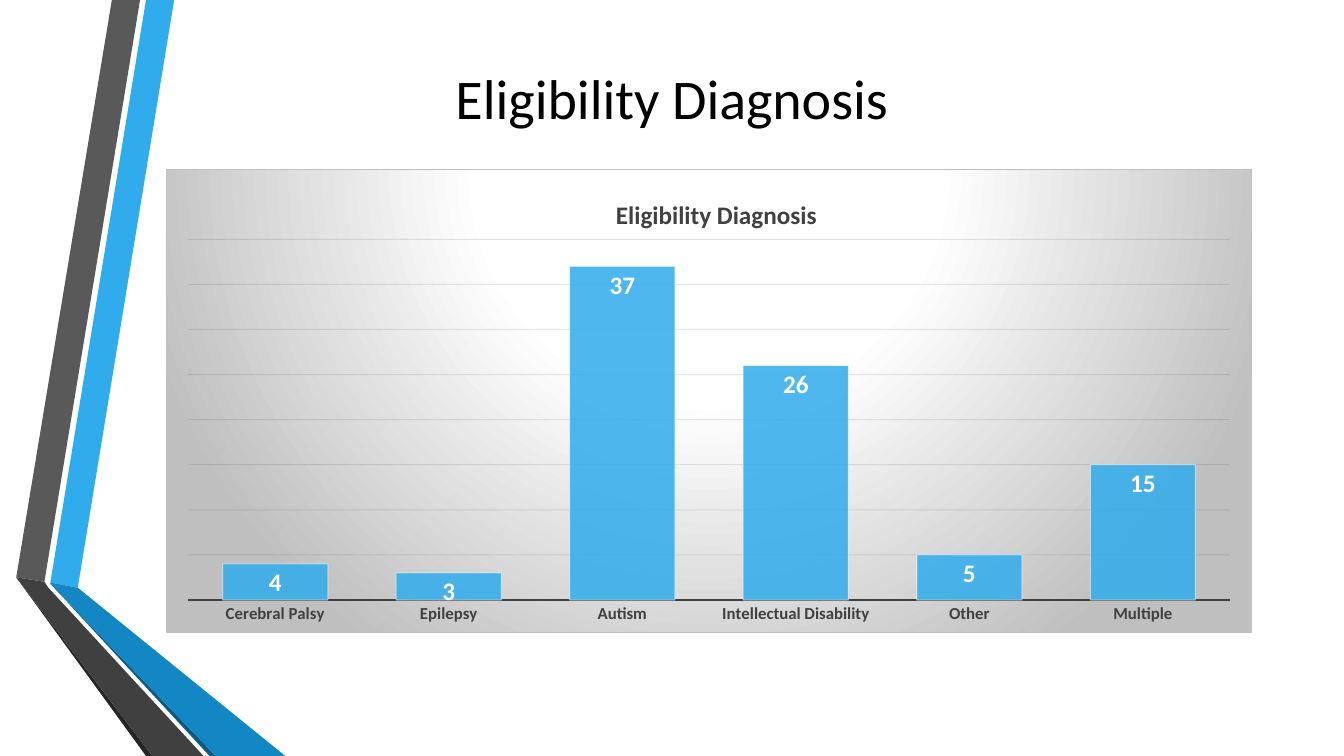
from lxml import etree
from pptx import Presentation
from pptx.chart.data import CategoryChartData
from pptx.dml.color import RGBColor
from pptx.enum.chart import XL_CHART_TYPE as ChartType
from pptx.enum.chart import XL_LABEL_POSITION as LabelPosition
from pptx.enum.chart import XL_TICK_MARK as TickMark
from pptx.enum.text import MSO_ANCHOR, PP_ALIGN
from pptx.oxml import parse_xml
from pptx.oxml.ns import nsdecls, qn
from pptx.util import Cm, Pt

FONT = "Calibri"
COLORS = {
    "black": "000000",
    "white": "FFFFFF",
    "blue": "30ACEC",
    "mid_blue": "1287C3",
    "deep_blue": "0C5A82",
    "gray": "595959",
    "dark_gray": "404040",
    "deep_gray": "262626",
    "light_gray": "BFBFBF",
    "grid": "0D0D0D",
}

# Ribbon facets from back to front: colour and corners in centimetres
RIBBONS = [
    ("blue", [(1.27, 14.68), (1.96, 14.81), (4.39, 0), (3.68, 0)]),
    ("gray", [(3.53, 0), (2.82, 0), (0.41, 14.55), (1.12, 14.66)]),
    ("deep_gray", [(0.41, 14.55), (3.68, 19.05), (3.84, 19.05)]),
    ("deep_blue", [(1.27, 14.71), (5.28, 19.05), (5.44, 19.05)]),
    ("mid_blue", [(1.27, 14.71), (5.44, 19.05), (7.19, 19.05), (1.96, 14.81), (1.27, 14.68)]),
    ("dark_gray", [(5.13, 19.05), (1.22, 14.81), (1.12, 14.66), (0.41, 14.55), (3.84, 19.05)]),
]

DIAGNOSES = {
    "Cerebral Palsy": 4,
    "Epilepsy": 3,
    "Autism": 37,
    "Intellectual Disability": 26,
    "Other": 5,
    "Multiple": 15,
}


def rgb(name):
    return RGBColor.from_string(COLORS[name])


def set_font(font, size, color, bold=False):
    font.name = FONT
    font.size = Pt(size)
    font.bold = bold
    font.color.rgb = rgb(color)


def set_line(line, color, width):
    line.color.rgb = rgb(color)
    line.width = Pt(width)


def find_part(chart, tag):
    return next(chart.element.iter(qn(tag)))


def set_opacity(element, percent):
    color = next(element.iter(qn("a:srgbClr")))
    etree.SubElement(color, qn("a:alpha")).set("val", str(percent * 1000))


def set_layout(element, index, **fractions):
    """Place a chart part by fractions of the chart area."""
    for layout in element.findall(qn("c:layout")):
        element.remove(layout)
    layout = parse_xml(f'<c:layout {nsdecls("c")}><c:manualLayout/></c:layout>')
    manual = layout[0]
    if "w" in fractions:
        etree.SubElement(manual, qn("c:layoutTarget")).set("val", "inner")
    for axis in "xy":
        etree.SubElement(manual, qn(f"c:{axis}Mode")).set("val", "edge")
    for key, value in fractions.items():
        etree.SubElement(manual, qn(f"c:{key}")).set("val", str(value))
    element.insert(index, layout)


def add_ribbon(slide, color, corners):
    points = [(Cm(x), Cm(y)) for x, y in corners]
    builder = slide.shapes.build_freeform(*points[0])
    builder.add_line_segments(points[1:], close=True)
    shape = builder.convert_to_shape()
    shape.shadow.inherit = False
    shape.fill.solid()
    shape.fill.fore_color.rgb = rgb(color)
    shape.line.fill.background()


def add_title(slide, text):
    title = slide.shapes.title
    title.left, title.top, title.width, title.height = Cm(2.34), Cm(0.94), Cm(29.18), Cm(3)
    title.text_frame.text = text
    title.text_frame.vertical_anchor = MSO_ANCHOR.MIDDLE
    paragraph = title.text_frame.paragraphs[0]
    paragraph.alignment = PP_ALIGN.CENTER
    set_font(paragraph.font, 40, "black")


def add_chart_background(chart):
    stops = "".join(
        f'<a:gs pos="{position * 1000}"><a:srgbClr val="{COLORS[color]}"/></a:gs>'
        for position, color in [(0, "white"), (39, "white"), (100, "light_gray")]
    )
    background = parse_xml(
        f'<c:spPr {nsdecls("c", "a")}><a:gradFill><a:gsLst>{stops}</a:gsLst>'
        '<a:path path="circle"><a:fillToRect l="50000" t="-80000" r="50000" b="180000"/></a:path>'
        f'</a:gradFill><a:ln w="{Pt(0.75)}"><a:solidFill>'
        f'<a:srgbClr val="{COLORS["light_gray"]}"/></a:solidFill></a:ln></c:spPr>'
    )
    chart.element.find(qn("c:txPr")).addprevious(background)


def format_axes(chart):
    category_axis = chart.category_axis
    category_axis.major_tick_mark = TickMark.NONE
    set_font(category_axis.tick_labels.font, 12, "dark_gray", bold=True)
    set_line(category_axis.format.line, "dark_gray", 1.5)

    value_axis = chart.value_axis
    value_axis.visible = False
    value_axis.minimum_scale, value_axis.maximum_scale = 0, 40
    value_axis.major_unit = 5
    value_axis.has_major_gridlines = True
    set_line(value_axis.major_gridlines.format.line, "grid", 0.75)
    set_opacity(find_part(chart, "c:majorGridlines"), 10)


def format_bars(chart):
    plot = chart.plots[0]
    plot.gap_width = 65
    plot.vary_by_categories = False
    series = plot.series[0]
    series.format.fill.solid()
    series.format.fill.fore_color.rgb = rgb("blue")
    set_line(series.format.line, "white", 0.75)
    bar_style = find_part(chart, "c:ser").find(qn("c:spPr"))
    set_opacity(bar_style.find(qn("a:solidFill")), 85)
    set_opacity(bar_style.find(qn("a:ln")), 50)

    labels = series.data_labels
    labels.show_value = True
    labels.position = LabelPosition.INSIDE_END
    set_font(labels.font, 18, "white", bold=True)


def add_bar_chart(slide, title, values):
    data = CategoryChartData()
    data.categories = list(values)
    data.add_series("Series 1", list(values.values()))
    frame = slide.shapes.add_chart(
        ChartType.COLUMN_CLUSTERED, Cm(4.19), Cm(4.27), Cm(27.36), Cm(11.68), data
    )
    chart = frame.chart
    set_font(chart.font, 10, "black")
    chart.has_legend = False
    chart.has_title = True
    chart.chart_title.text_frame.text = title
    set_font(chart.chart_title.text_frame.paragraphs[0].font, 18, "dark_gray", bold=True)
    add_chart_background(chart)
    format_axes(chart)
    format_bars(chart)
    set_layout(find_part(chart, "c:title"), 1, x=0.41, y=0.05)
    set_layout(find_part(chart, "c:plotArea"), 0, x=0.02, y=0.15, w=0.96, h=0.78)


def main():
    presentation = Presentation()
    presentation.slide_width, presentation.slide_height = Cm(33.87), Cm(19.05)
    slide = presentation.slides.add_slide(presentation.slide_layouts[5])

    # Folded ribbons on the left
    for color, corners in RIBBONS:
        add_ribbon(slide, color, corners)

    # Heading and chart
    add_title(slide, "Eligibility Diagnosis")
    add_bar_chart(slide, "Eligibility Diagnosis", DIAGNOSES)

    presentation.save("out.pptx")


if __name__ == "__main__":
    main()
